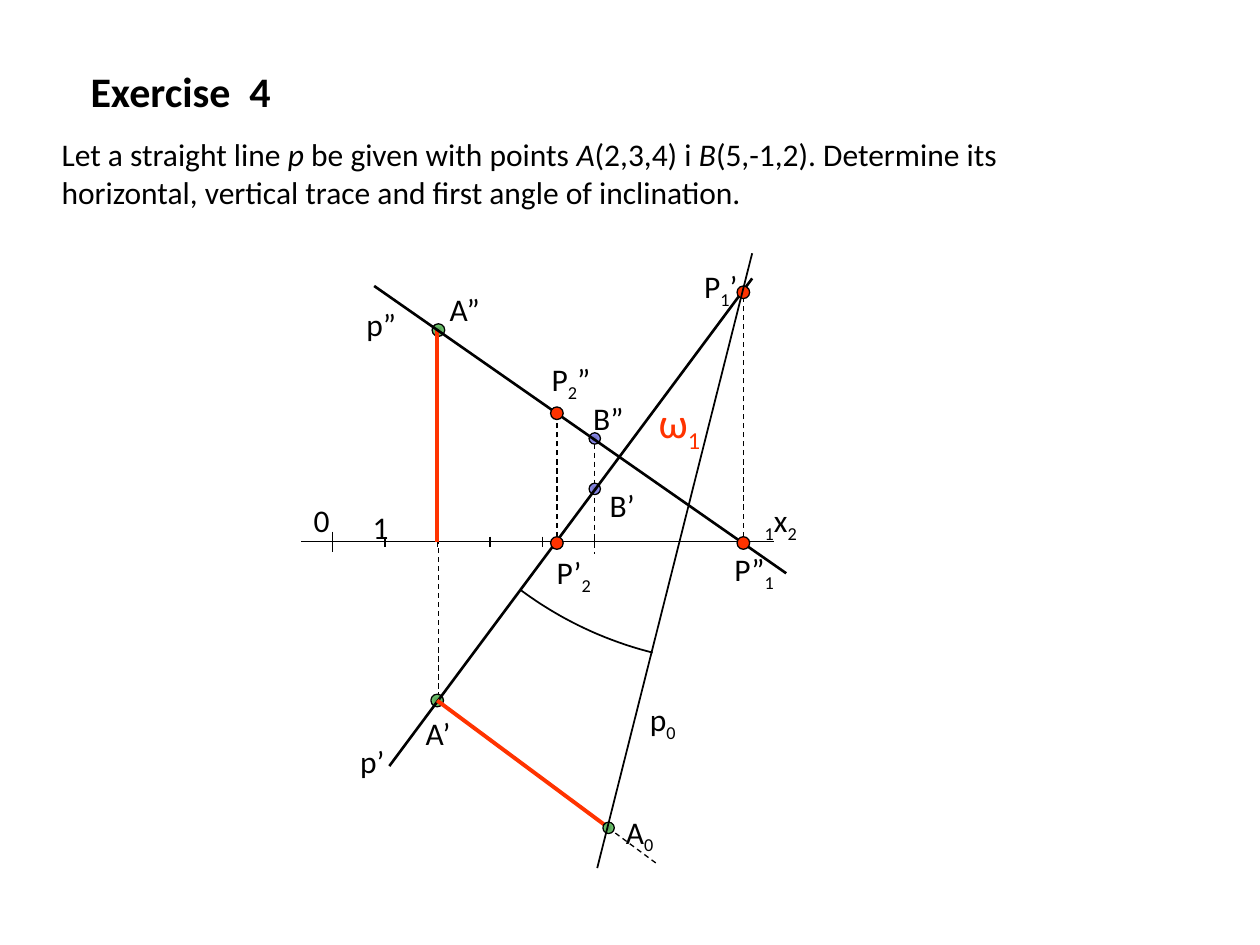
from math import atan2, cos, hypot, sin

from pptx import Presentation
from pptx.dml.color import RGBColor
from pptx.enum.dml import MSO_LINE_DASH_STYLE as Dash
from pptx.enum.shapes import MSO_CONNECTOR as Connector, MSO_SHAPE as Shape
from pptx.oxml import parse_xml
from pptx.oxml.ns import nsdecls, qn
from pptx.util import Inches, Pt

BLACK = RGBColor(0x00, 0x00, 0x00)
RED = RGBColor(0xFF, 0x33, 0x00)
GREENS = (RGBColor(0x52, 0x96, 0x52), RGBColor(0x73, 0xD1, 0x73))
BLUES = (RGBColor(0x6B, 0x6B, 0xB6), RGBColor(0x95, 0x95, 0xFF))

deck = Presentation()
deck.slide_width, deck.slide_height = Inches(10), Inches(7.5)
page = deck.slides.add_slide(deck.slide_layouts[6])


def add_line(x1, y1, x2, y2, width=0.75, color=BLACK, dash=None):
    line = page.shapes.add_connector(
        Connector.STRAIGHT, Inches(x1), Inches(y1), Inches(x2), Inches(y2))
    for name, value in {"width": Pt(width), "dash_style": dash}.items():
        setattr(line.line, name, value)
    line.line.color.rgb = color
    line._element.spPr.append(parse_xml(f"<a:effectLst {nsdecls('a')}/>"))


def add_text(x, y, width, height, pieces, size=18, color=BLACK):
    """Each piece is (text, format); the format may hold font values and a baseline."""
    box = page.shapes.add_textbox(Inches(x), Inches(y), Inches(width), Inches(height))
    box.text_frame.word_wrap = True
    para = box.text_frame.paragraphs[0]
    for text, extra in pieces:
        span = para.add_run()
        span.text = text
        span.font.color.rgb = color
        values = {"name": "Calibri", "size": Pt(size), **extra}
        baseline = values.pop("baseline", None)
        for name, value in values.items():
            setattr(span.font, name, value)
        if baseline:
            span._r.get_or_add_rPr().set("baseline", str(baseline))


# Dashed projection lines through A, B, the two traces and A0
for ends in [(3.48, 2.63, 3.48, 5.56), (4.72, 3.52, 4.72, 4.4),
             (5.9, 4.26, 5.9, 2.35), (4.42, 4.26, 4.42, 3.31),
             (3.5, 5.59, 5.22, 6.86)]:
    add_line(*ends, dash=Dash.DASH)

# Axis with its origin and unit ticks
axis_y, origin_x = 4.3, 2.64
unit = (4.72 - origin_x) / 5
add_line(2.39, axis_y, 6.14, axis_y)
for tick in range(6):
    half = 0.04 if tick else 0.08
    tick_x = origin_x + tick * unit
    add_line(tick_x, axis_y - half, tick_x, axis_y + half)

# Points by centre, each with the lines that are drawn over it
POINTS_AND_LINES = [
    ([(3.47, 5.56, 0.1, GREENS), (3.48, 2.62, 0.1, GREENS),
      (4.72, 3.88, 0.09, BLUES), (4.72, 3.48, 0.09, BLUES)],
     [(3.47, 2.62, 3.47, 4.3, 2.25, RED),      # height of A
      (2.97, 2.27, 6.24, 4.55, 1.5),           # p”
      (3.09, 6.08, 5.97, 2.21, 1.5),           # p’
      (3.47, 5.56, 4.83, 6.57, 2.25, RED)]),   # height laid off from A’
    ([(5.9, 4.31, 0.1, RED), (4.42, 4.31, 0.1, RED), (5.9, 2.32, 0.1, RED),
      (4.42, 3.28, 0.1, RED), (4.83, 6.57, 0.09, GREENS)],
     [(5.97, 2.01, 4.74, 6.89, 1)]),           # p0
]
for points, lines in POINTS_AND_LINES:
    for x, y, size, color in points:
        dot = page.shapes.add_shape(
            Shape.OVAL, Inches(x - size / 2), Inches(y - size / 2),
            Inches(size), Inches(size))
        dot.shadow.inherit = False
        dot.line.color.rgb = BLACK
        dot.line.width = Pt(0.75)
        if color == RED:
            dot.fill.solid()
            dot.fill.fore_color.rgb = RED
        else:
            dot.fill.gradient()
            for stop, shade in zip(dot.fill.gradient_stops, color):
                stop.color.rgb = shade
            # Radiate from the centre instead of running linearly
            gradient = dot._element.spPr.find(qn("a:gradFill"))
            gradient.remove(gradient.find(qn("a:lin")))
            gradient.append(parse_xml(
                f'<a:path {nsdecls("a")} path="shape">'
                '<a:fillToRect l="50000" t="50000" r="50000" b="50000"/></a:path>'))
    for line in lines:
        add_line(*line)

# Arc of the inclination angle, centred on the horizontal trace
center_x, center_y = 5.9, 2.31
radius = hypot(5.18 - center_x, 5.18 - center_y)
start = atan2(5.18 - center_y, 5.18 - center_x)
end = atan2(4.68 - center_y, 4.13 - center_x)
steps = 24
angles = [start + (end - start) * step / steps for step in range(steps + 1)]
arc_points = [(Inches(center_x + radius * cos(angle)),
               Inches(center_y + radius * sin(angle))) for angle in angles]
builder = page.shapes.build_freeform(*arc_points[0])
builder.add_line_segments(arc_points[1:], close=False)
arc = builder.convert_to_shape()
arc.shadow.inherit = False
arc.fill.background()
arc.line.color.rgb = BLACK
arc.line.width = Pt(1)

# Labels; an underscore marks the next character as a subscript
LABELS = [
    (3.28, 5.62, 0.79, "A’"), (3.47, 2.25, 0.48, "A”"),
    (2.39, 3.93, 0.3, "0"), (2.86, 3.98, 0.25, "1"), (5.97, 3.93, 0.9, "_1x_2"),
    (4.74, 3.81, 0.42, "B’"), (4.61, 3.12, 0.7, "B”"),
    (2.81, 2.37, 0.55, "p”"), (2.76, 5.84, 0.43, "p’"),
    (5.73, 4.32, 0.7, "P”_1"), (5.49, 2.07, 0.64, "P_1’"),
    (4.32, 4.34, 0.55, "P’_2"), (4.28, 2.81, 0.72, "P_2”"),
    (4.87, 6.4, 1.14, "A_0"), (5.06, 5.51, 0.54, "p_0"),
    (5.13, 3.1, 0.6, "ω_1"),
]
for x, y, width, label in LABELS:
    first, *rest = label.split("_")
    pieces = [(first, {})] if first else []
    for part in rest:
        pieces.append((part[0], {"baseline": -25000}))
        if part[1:]:
            pieces.append((part[1:], {}))
    if label.startswith("ω"):
        add_text(x, y, width, 0.5, pieces, size=24, color=RED)
    else:
        add_text(x, y, width, 0.4, pieces)

# Task and title
italic = {"italic": True}
add_text(0.39, 1.02, 8.05, 0.71, [
    ("Let a straight line ", {}), ("p ", italic),
    ("be given with points ", {}), ("A", italic), ("(2,3,4) i ", {}), ("B", italic),
    ("(5,-1,2). Determine its horizontal, vertical trace and first angle of inclination.", {}),
])
add_text(0.62, 0.47, 2.59, 0.5, [("Exercise  4", {"bold": True})], size=24)

deck.save("out.pptx")
